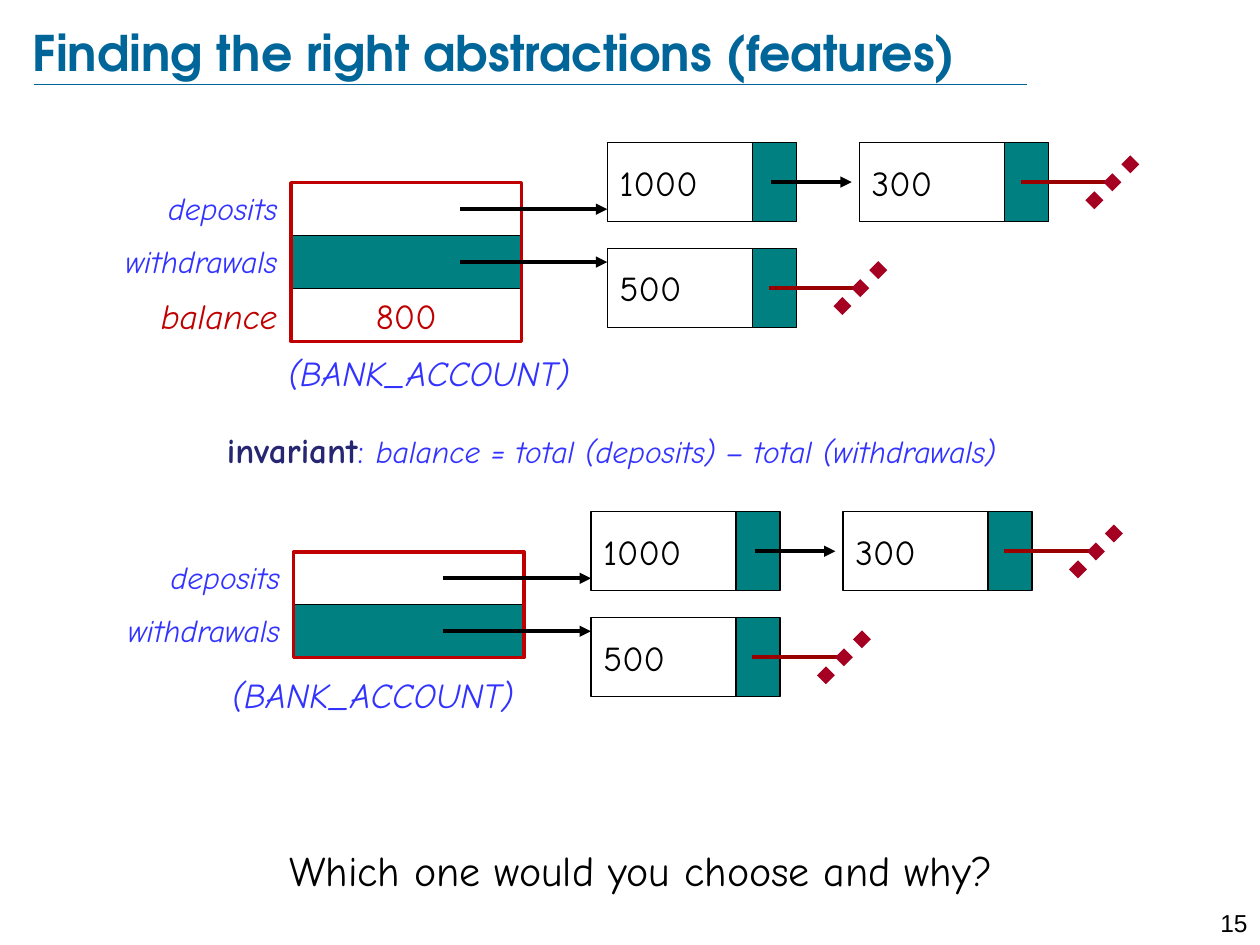
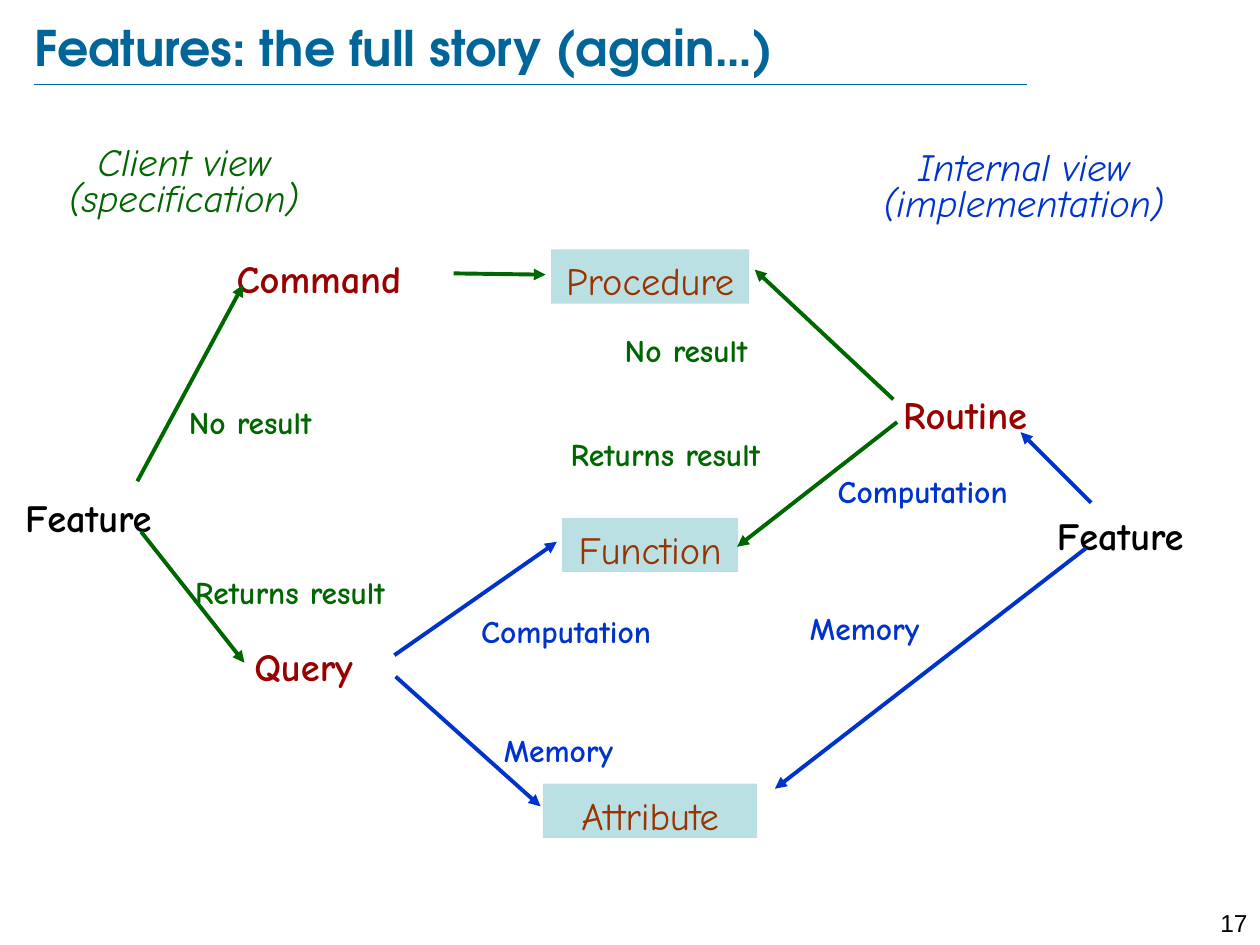
from dataclasses import dataclass

from lxml.etree import SubElement
from pptx import Presentation
from pptx.dml.color import RGBColor
from pptx.enum.dml import MSO_LINE
from pptx.enum.shapes import MSO_CONNECTOR, MSO_SHAPE
from pptx.enum.text import MSO_ANCHOR, PP_ALIGN
from pptx.oxml.ns import qn
from pptx.util import Inches, Pt

# Shared look: a grid of 100 columns by 75 rows covers the slide
SLIDE_W, SLIDE_H = Inches(10), Inches(7.5)
COL, ROW = SLIDE_W / 100, SLIDE_H / 75
HAND, TITLE_FONT, NUMBER_FONT = "Comic Neue", "TeX Gyre Adventor", "Arial"
LEFT, CENTER, RIGHT = PP_ALIGN.LEFT, PP_ALIGN.CENTER, PP_ALIGN.RIGHT
COLORS = {
    "title": "006699", "black": "000000", "white": "FFFFFF",
    "teal": "008080", "red": "C00000", "feature": "3333FF",
    "keyword": "262673", "end": "990000", "dots": "A50021",
    "green": "006600", "blue": "0033CC", "pale": "BBE0E3", "rust": "993300",
}


@dataclass
class Box:
    """An area of the grid, in columns and rows."""
    left: float
    top: float
    width: float
    height: float

    def inner(self, dx, dy, width, height):
        return Box(self.left + dx, self.top + dy, width, height)

    def emu(self):
        return (round(self.left * COL), round(self.top * ROW),
                round(self.width * COL), round(self.height * ROW))


def rgb(name):
    return RGBColor.from_string(COLORS[name])


def style_run(run, size, color, font=HAND, bold=False, italic=False):
    run.font.size = Pt(size)
    run.font.name = font
    run.font.bold = bold
    run.font.italic = italic
    run.font.color.rgb = rgb(color)


def write(frame, text, size, color, align=LEFT, spacing=None, inset=True,
          anchor=MSO_ANCHOR.TOP, wrap=True, **look):
    frame.word_wrap = wrap
    frame.vertical_anchor = anchor
    if not inset:
        frame.margin_left = frame.margin_right = 0
        frame.margin_top = frame.margin_bottom = 0
    paragraph = frame.paragraphs[0]
    paragraph.text = text
    paragraph.alignment = align
    if spacing:
        paragraph.line_spacing = spacing
    for run in paragraph.runs:
        style_run(run, size, color, **look)
    return paragraph


def add_text(slide, box, text, size, color, **look):
    return write(slide.shapes.add_textbox(*box.emu()).text_frame,
                 text, size, color, **look)


def add_rect(slide, box, fill=None, line=None, weight=0.75):
    rect = slide.shapes.add_shape(MSO_SHAPE.RECTANGLE, *box.emu())
    rect.shadow.inherit = False
    if fill:
        rect.fill.solid()
        rect.fill.fore_color.rgb = rgb(fill)
    else:
        rect.fill.background()
    if line:
        rect.line.color.rgb = rgb(line)
        rect.line.width = Pt(weight)
    else:
        rect.line.fill.background()
    return rect


def add_line(slide, start, end, color, weight, arrow=False, dotted=False):
    (x1, y1), (x2, y2) = start, end
    link = slide.shapes.add_connector(
        MSO_CONNECTOR.STRAIGHT, round(x1 * COL), round(y1 * ROW),
        round(x2 * COL), round(y2 * ROW))
    link.line.color.rgb = rgb(color)
    link.line.width = Pt(weight)
    if dotted:
        link.line.dash_style = MSO_LINE.ROUND_DOT
    properties = link._element.spPr
    if arrow:
        SubElement(properties.find(qn("a:ln")), qn("a:tailEnd"), type="triangle")
    SubElement(properties, qn("a:effectLst"))


def new_slide(deck, title, title_box, number):
    """Blank slide with the rule, page number and title."""
    slide = deck.slides.add_slide(deck.slide_layouts[6])
    add_line(slide, (2.7, 6.7), (81.5, 6.7), "title", 0.25)
    add_text(slide, Box(94.5, 71.6, 5.5, 2.4), number, 14, "black",
             align=RIGHT, font=NUMBER_FONT)
    add_text(slide, title_box, title, 28, "title", font=TITLE_FONT, bold=True,
             inset=False, anchor=MSO_ANCHOR.MIDDLE)
    return slide


# Slide with the two account representations
FIELD_W, FIELD_H = 18.3, 4.2
VALUE_W, LINK_W, CELL_H, CELL_PITCH = 11.5, 3.5, 6.3, 20


def linked_list(slide, box, amounts):
    """Cells joined by arrows, with a dotted continuation after the last."""
    middle = box.top + CELL_H / 2
    for index, amount in enumerate(amounts):
        left = box.left + index * CELL_PITCH
        value = add_rect(slide, Box(left, box.top, VALUE_W, CELL_H),
                         "white", "black")
        write(value.text_frame, amount, 20, "black",
              anchor=MSO_ANCHOR.MIDDLE, wrap=False)
        add_rect(slide, Box(left + VALUE_W, box.top, LINK_W, CELL_H),
                 "teal", "black")
        if index < len(amounts) - 1:
            add_line(slide, (left + 13, middle), (left + 19.4, middle),
                     "black", 2.15, arrow=True)
    add_line(slide, (left + 12.8, middle), (left + 19.7, middle), "end", 2)
    add_line(slide, (left + 18.3, middle + 1.8), (left + 21.9, middle - 1.8),
             "dots", 7.25, dotted=True)


def account(slide, box, lists_left, caption_box, balance=None):
    """Account record with field names, and the lists its fields refer to."""
    fields = [("deposits", "white", ["1000", "300"], -3.2),
              ("withdrawals", "teal", ["500"], 5.2)]
    if balance:
        fields.append(("balance", "white", None, 0))
    for index, (name, fill, amounts, list_dy) in enumerate(fields):
        field_box = box.inner(0, index * FIELD_H, FIELD_W, FIELD_H)
        field = add_rect(slide, field_box, fill, "black")
        size, color = (18, "feature") if amounts else (20, "red")
        add_text(slide, field_box.inner(-19.8, 0, 19.7, 4), name, size, color,
                 align=RIGHT, italic=True)
        if amounts:
            linked_list(slide, Box(lists_left, box.top + list_dy, 40, CELL_H),
                        amounts)
        else:
            write(field.text_frame, balance, 20, "red", align=CENTER,
                  anchor=MSO_ANCHOR.MIDDLE, wrap=False)
    add_rect(slide, box, line="red", weight=2)
    for index in range(2):
        y = box.top + (index + 0.5) * FIELD_H
        add_line(slide, (lists_left - 11.7, y), (lists_left, y),
                 "black", 2.15, arrow=True)
    add_text(slide, caption_box, "(BANK_ACCOUNT)", 20, "feature",
             align=CENTER, italic=True)


def abstractions_slide(deck):
    slide = new_slide(deck, "Finding the right abstractions (features)",
                      Box(2.6, 0.2, 75.8, 7.9), "15")
    account(slide, Box(23.1, 14.5, FIELD_W, 3 * FIELD_H), 48.2,
            Box(17.4, 27.4, 33.3, 4.4), balance="800")
    account(slide, Box(23.3, 43.8, FIELD_W, 2 * FIELD_H), 46.9,
            Box(12.9, 53, 33.4, 4.4))
    # Invariant and closing question
    invariant = add_text(slide, Box(2.5, 33.5, 92.1, 5.4), "invariant", 20,
                         "keyword", align=CENTER, bold=True)
    formula = "balance = total (deposits) – total (withdrawals)"
    for text, size, italic in [(": ", 20, False), (formula, 18, True)]:
        run = invariant.add_run()
        run.text = text
        style_run(run, size, "feature", italic=italic)
    add_text(slide, Box(4.8, 66.5, 92.1, 5.4),
             "Which one would you choose and why?", 24, "black", align=CENTER)


# Slide with the two classifications of features; places are relative to a view
CLIENT_NODES = [("Feature", "black", 0, 27.1, 17.5),
                ("Command", "end", 16.8, 8.1, 20.3),
                ("Query", "end", 18.2, 38.9, 15)]
CLIENT_BRANCHES = [
    ("green", (9.9, 27.2), (18.3, 11.6), "No result", 13, 20),
    ("green", (10.2, 31.2), (18.4, 41.6), "Returns result", 13.5, 33.5),
    ("blue", (30.3, 41), (43.2, 32), "Computation", 36.2, 36.6),
    ("blue", (30.4, 42.7), (41.9, 53), "Memory", 38, 46),
    ("green", (35, 10.7), (42.3, 10.8), None, 0, 0),
]
INTERNAL_NODES = [("Feature", "black", 38.9, 28.5, 17.1),
                  ("Routine", "end", 26.7, 18.9, 15.3)]
INTERNAL_BRANCHES = [
    ("green", (26.9, 20.7), (15.9, 10.4), "No result", 4.6, 14.3),
    ("green", (27.2, 22.5), (14.5, 32.4), "Returns result", 0.3, 22.5),
    ("blue", (42.6, 28.9), (37, 23.3), "Computation", 21.5, 25.5),
    ("blue", (42.2, 32.5), (17.5, 51.6), "Memory", 19.3, 36.3),
]


def view(slide, box, nodes, branches):
    """Tree of feature kinds with labelled branches."""
    for name, color, dx, dy, width in nodes:
        add_text(slide, box.inner(dx, dy, width, 5.4), name, 22, color,
                 bold=True, spacing=1.17)
    for color, (x1, y1), (x2, y2), label, dx, dy in branches:
        if label:
            add_text(slide, box.inner(dx, dy, 22.2, 4.6), label, 18, color,
                     bold=True, spacing=1.17)
        add_line(slide, (box.left + x1, box.top + y1),
                 (box.left + x2, box.top + y2), color, 2.25, arrow=True)


def view_heading(slide, box, text, color):
    add_text(slide, box, text, 22, color, align=CENTER, italic=True,
             spacing=0.78, inset=False)


def shared_kinds(slide, box):
    """Boxes in the middle, where both views meet."""
    kinds = [("Procedure", 0, 15.7), ("Function", 21.3, 14),
             ("Attribute", 42.4, 17)]
    for name, dy, width in kinds:
        kind = add_rect(slide, box.inner((box.width - width) / 2, dy,
                                         width, 4.3), "pale")
        write(kind.text_frame, name, 22, "rust", align=CENTER, spacing=1.17,
              inset=False)


def features_slide(deck):
    slide = new_slide(deck, "Features: the full story (again…)",
                      Box(2.7, 1.3, 86.9, 4.8), "17")
    shared_kinds(slide, Box(43.1, 19.8, 17, 46.7))
    view_heading(slide, Box(3.6, 11.7, 22, 5.8),
                 "Client view\n(specification)", "green")
    view_heading(slide, Box(64.9, 12.1, 32.7, 5.9),
                 "Internal view (implementation)", "blue")
    view(slide, Box(1, 11, 60, 56), CLIENT_NODES, CLIENT_BRANCHES)
    view(slide, Box(44, 11, 56, 56), INTERNAL_NODES, INTERNAL_BRANCHES)


def main():
    deck = Presentation()
    deck.slide_width, deck.slide_height = SLIDE_W, SLIDE_H
    abstractions_slide(deck)
    features_slide(deck)
    deck.save("out.pptx")


if __name__ == "__main__":
    main()
